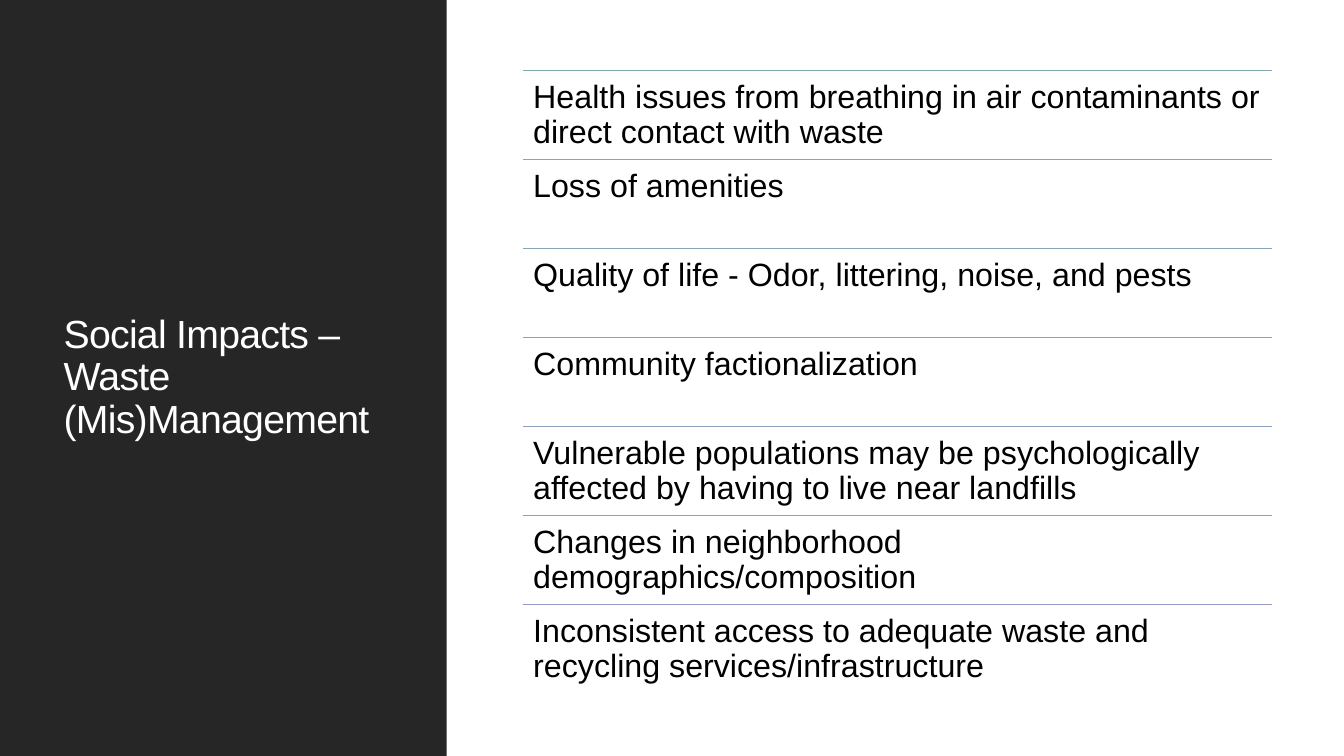
from dataclasses import dataclass

import pptx
import pptx.dml.color
import pptx.enum.shapes
import pptx.enum.text
import pptx.oxml
import pptx.oxml.ns
import pptx.util

RGB = pptx.dml.color.RGBColor
WIDTH, HEIGHT = 13.33, 7.5


@dataclass(frozen=True)
class Theme:
    font: str = "Arial"
    panel: RGB = RGB(0x26, 0x26, 0x26)
    title: RGB = RGB(0xFF, 0xFF, 0xFF)
    body: RGB = RGB(0, 0, 0)
    first_rule: RGB = RGB(0x80, 0xA8, 0xAE)
    last_rule: RGB = RGB(0x96, 0x99, 0xC6)
    title_size: int = 28
    body_size: int = 23
    rule_width: float = 1.25
    inset: float = 0.1


THEME = Theme()
TITLE = "Social Impacts – Waste (Mis)Management"
IMPACTS = [
    "Health issues from breathing in air contaminants or direct contact with waste",
    "Loss of amenities",
    "Quality of life - Odor, littering, noise, and pests",
    "Community factionalization",
    "Vulnerable populations may be psychologically affected\u00a0by having to live near landfills",
    "Changes in neighborhood demographics/composition",
    "Inconsistent access to adequate waste and recycling services/infrastructure",
]


def inches(*lengths):
    return [pptx.util.Inches(n) for n in lengths]


def write(tf, text, size, color, anchor):
    """Fill a text frame with one left-aligned paragraph."""
    tf.word_wrap = True
    tf.auto_size = pptx.enum.text.MSO_AUTO_SIZE.NONE
    tf.vertical_anchor = anchor
    tf.margin_left = tf.margin_right = pptx.util.Inches(THEME.inset)
    tf.margin_top = tf.margin_bottom = pptx.util.Inches(THEME.inset)
    tf.text = text
    p = tf.paragraphs[0]
    p.alignment = pptx.enum.text.PP_ALIGN.LEFT
    p.line_spacing = 0.9
    r = p.runs[0]
    r.font.name = THEME.font
    r.font.size = pptx.util.Pt(size)
    r.font.color.rgb = color
    return r


def blend(start, end, share):
    return RGB(*(a + int((b - a) * share) for a, b in zip(start, end)))


def add_title_panel(slide, left, top, width, height):
    sp = slide.shapes.add_shape(pptx.enum.shapes.MSO_SHAPE.RECTANGLE,
                                *inches(left, top, width, height))
    sp.shadow.inherit = False
    sp.fill.solid()
    sp.fill.fore_color.rgb = THEME.panel
    sp.line.fill.background()

    title = slide.shapes.title
    slide.shapes._spTree.append(title._element)  # bring in front of the panel
    title.left, title.top, title.width, title.height = inches(
        left + 0.12 * width, top + 0.08 * height, 0.76 * width, 0.84 * height)
    r = write(title.text_frame, TITLE, THEME.title_size, THEME.title,
              pptx.enum.text.MSO_ANCHOR.MIDDLE)
    r.font._element.set("spc", "-50")


def add_rule(slide, left, top, width, color):
    line = slide.shapes.add_connector(pptx.enum.shapes.MSO_CONNECTOR.STRAIGHT,
                                      *inches(left, top, left + width, top))
    line.line.color.rgb = color
    line.line.width = pptx.util.Pt(THEME.rule_width)
    line._element.spPr.append(
        pptx.oxml.parse_xml(f"<a:effectLst {pptx.oxml.ns.nsdecls('a')}/>"))


def add_impact_list(slide, left, top, width, height):
    """Split the box into equal rows, each a rule with its text below."""
    row = height / len(IMPACTS)
    for i, text in enumerate(IMPACTS):
        y = top + i * row
        share = i / (len(IMPACTS) - 1)
        add_rule(slide, left, y, width,
                 blend(THEME.first_rule, THEME.last_rule, share))
        box = slide.shapes.add_textbox(*inches(left, y, width, row))
        write(box.text_frame, text, THEME.body_size, THEME.body,
              pptx.enum.text.MSO_ANCHOR.TOP)


def main():
    prs = pptx.Presentation()
    prs.slide_width, prs.slide_height = inches(WIDTH, HEIGHT)
    slide = prs.slides.add_slide(prs.slide_layouts.get_by_name("Title Only"))
    add_title_panel(slide, 0, 0, 4.43, HEIGHT)
    add_impact_list(slide, 5.19, 0.7, 7.43, 6.18)
    prs.save("out.pptx")


if __name__ == "__main__":
    main()
